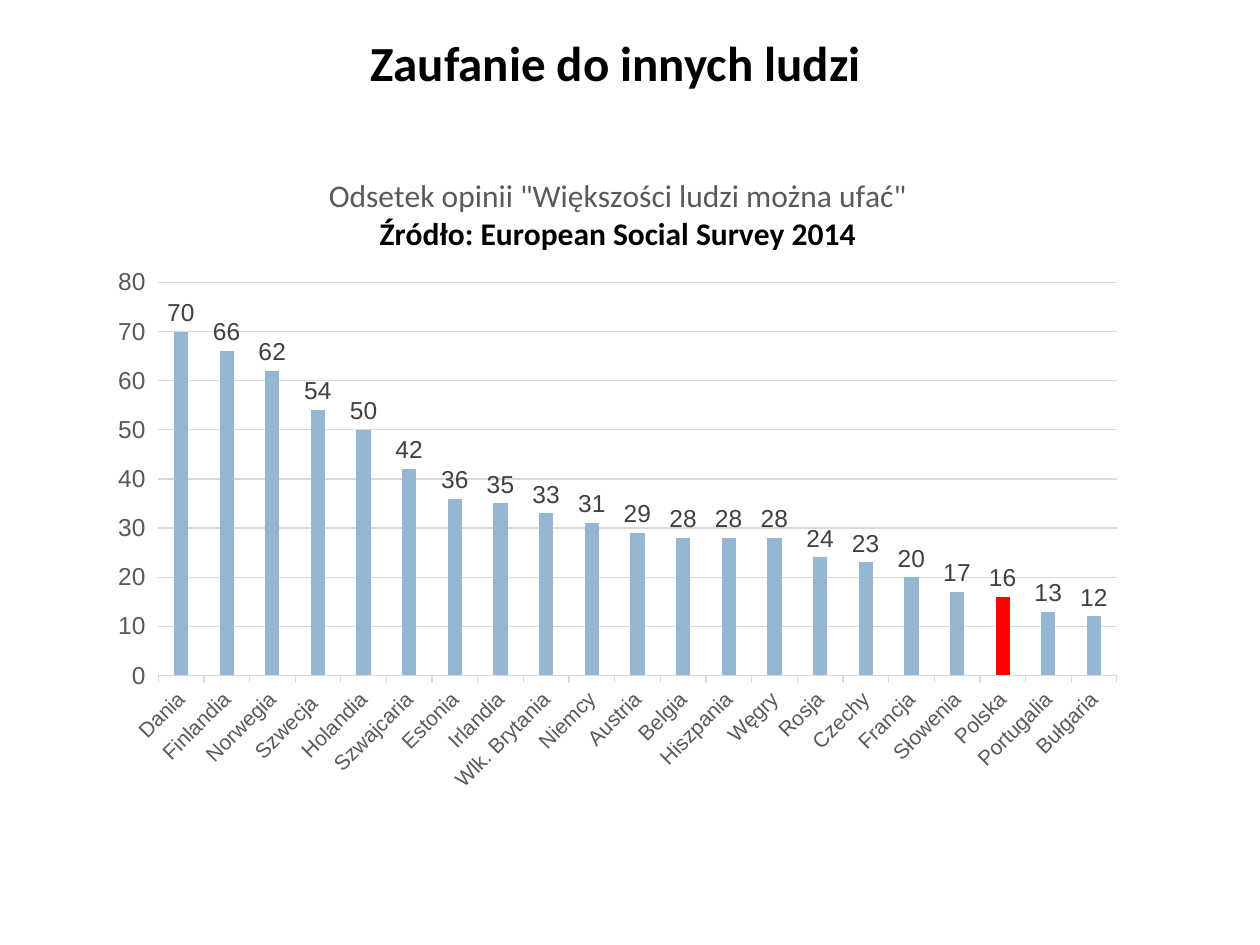
from pptx import Presentation
from pptx import util as u
from pptx.chart import data as cd
from pptx.dml.color import RGBColor
from pptx.enum import chart as ce, text as te
from pptx.oxml import parse_xml
from pptx.oxml.ns import nsdecls

COLORS = {"black": "000000", "grey": "595959", "label": "404040",
          "grid": "D9D9D9", "bar": "94B6D2", "accent": "FF0000"}
TRUST = {"Dania": 70, "Finlandia": 66, "Norwegia": 62, "Szwecja ": 54,
         "Holandia": 50, "Szwajcaria": 42, "Estonia": 36, "Irlandia": 35,
         "Wlk. Brytania": 33, "Niemcy": 31, "Austria": 29, "Belgia": 28,
         "Hiszpania": 28, "Węgry": 28, "Rosja": 24, "Czechy": 23,
         "Francja": 20, "Słowenia": 17, "Polska": 16, "Portugalia": 13,
         "Bułgaria": 12}


def rgb(name):
    return RGBColor.from_string(COLORS[name])


def style_font(font, size, color, name="Arial", bold=False):
    font.size, font.name, font.bold = u.Pt(size), name, bold
    font.color.rgb = rgb(color)


def add_text(p, content, **fmt):
    p.alignment = te.PP_ALIGN.CENTER
    r = p.add_run()
    r.text = content
    style_font(r.font, **fmt)


def manual_layout(inner=False, **fractions):
    """Layout element placing a chart part by fractions of the chart."""
    modes = {"xMode": "edge", "yMode": "edge"}
    target = '<c:layoutTarget val="inner"/>' if inner else ""
    values = {**modes, **fractions}
    body = "".join(f'<c:{k} val="{v}"/>' for k, v in values.items())
    return parse_xml(f'<c:layout {nsdecls("c")}><c:manualLayout>{target}{body}'
                     '</c:manualLayout></c:layout>')


class SlideBuilder:
    def __init__(self, prs):
        self.s = prs.slides.add_slide(prs.slide_layouts[6])

    def heading(self, content, *box):
        tf = self.s.shapes.add_textbox(*map(u.Inches, box)).text_frame
        tf.word_wrap = False
        tf.auto_size = te.MSO_AUTO_SIZE.SHAPE_TO_FIT_TEXT
        add_text(tf.paragraphs[0], content, size=28, color="black",
                 name="Calibri", bold=True)

    def column_chart(self, values, highlight, *box):
        data = cd.CategoryChartData()
        data.categories = list(values)
        data.add_series("Series 1", list(values.values()))
        chart = self.s.shapes.add_chart(
            ce.XL_CHART_TYPE.COLUMN_CLUSTERED, *map(u.Inches, box), data).chart
        chart.has_legend = False
        style_font(chart.font, 10, "black")
        self.columns(chart.plots[0], list(values).index(highlight))
        self.axes(chart)
        area = chart._chartSpace.chart.plotArea
        for old in area.findall(manual_layout().tag):
            area.remove(old)
        area.insert(0, manual_layout(inner=True, x=0.06, y=0.21, w=0.92, h=0.6))
        return chart

    def columns(self, plot, highlight):
        plot.gap_width, plot.overlap = 219, -27
        plot.vary_by_categories = False
        series = plot.series[0]
        for part, color in ((series, "bar"), (series.points[highlight], "accent")):
            part.format.fill.solid()
            part.format.fill.fore_color.rgb = rgb(color)
        plot.has_data_labels = True
        labels = plot.data_labels
        labels.show_value = True
        labels.position = ce.XL_LABEL_POSITION.OUTSIDE_END
        style_font(labels.font, 14, "label")

    def axes(self, chart):
        cat, val = chart.category_axis, chart.value_axis
        for axis, size in ((cat, 12), (val, 14)):
            axis.major_tick_mark = ce.XL_TICK_MARK.OUTSIDE
            style_font(axis.tick_labels.font, size, "grey")
        # Slanted country names
        cat._element.txPr.bodyPr.set("rot", "-2700000")
        val.minimum_scale, val.maximum_scale, val.major_unit = 0, 80, 10
        val.format.line.fill.background()
        for line in (cat.format.line, val.major_gridlines.format.line):
            line.color.rgb = rgb("grid")
            line.width = u.Pt(0.75)

    def chart_title(self, chart, question, source):
        title = chart.chart_title
        tf = title.text_frame
        add_text(tf.paragraphs[0], question, size=18, color="grey", name="Calibri")
        add_text(tf.add_paragraph(), source, size=18, color="black",
                 name="Calibri", bold=True)
        title.include_in_layout = False
        for old in title._element.findall(manual_layout().tag):
            title._element.remove(old)
        title._element.tx.addnext(manual_layout(x=0.22, y=0.04))


def main():
    prs = Presentation()
    prs.slide_width, prs.slide_height = u.Inches(10), u.Inches(7.5)
    slide = SlideBuilder(prs)

    # Heading
    slide.heading("Zaufanie do innych ludzi", 2.82, 0.21, 4.13, 0.57)

    # Trust by country, with Poland marked
    chart = slide.column_chart(TRUST, "Polska", 0.76, 1.15, 8.27, 5.2)
    slide.chart_title(chart, 'Odsetek opinii "Większości ludzi można ufać"',
                      "Źródło: European Social Survey 2014")
    prs.save("out.pptx")


if __name__ == "__main__":
    main()
